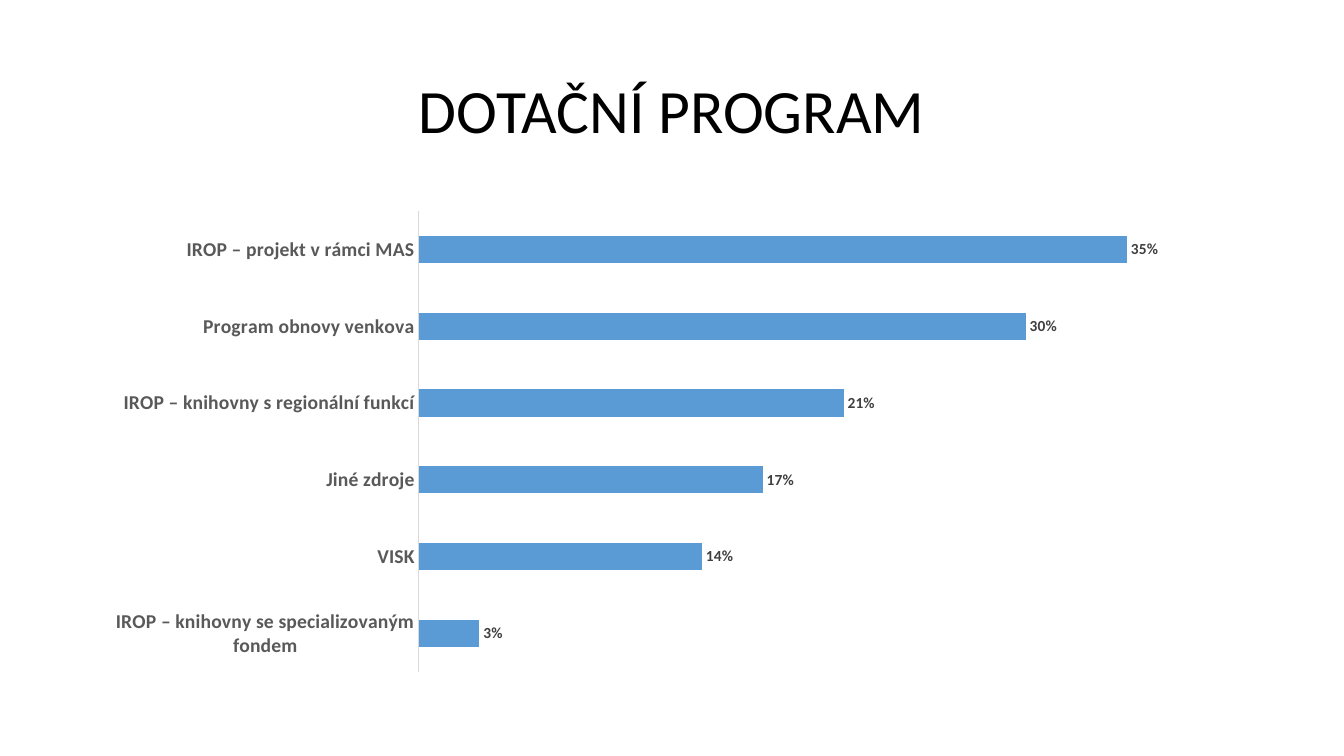
from dataclasses import dataclass

from pptx import Presentation
from pptx import util as u
from pptx.chart.data import CategoryChartData
from pptx.dml.color import RGBColor
from pptx.enum import chart as ch, text

# Content
TITLE = "DOTAČNÍ PROGRAM"
SERIES = "Series 1"
PROGRAMS = [
    ("IROP – projekt v rámci MAS", 0.35),
    ("Program obnovy venkova", 0.30),
    ("IROP – knihovny s regionální funkcí", 0.21),
    ("Jiné zdroje", 0.17),
    ("VISK", 0.14),
    ("IROP – knihovny se specializovaným fondem", 0.03),
]


@dataclass(frozen=True)
class Theme:
    font: str = "Calibri"
    ink: str = "000000"
    category: str = "595959"
    value: str = "404040"
    axis: str = "D9D9D9"
    bar: str = "5B9BD5"
    title_size: int = 44
    category_size: int = 14
    value_size: int = 11
    base_size: int = 10


THEME = Theme()

# Layout: shared side margin, title band above chart band
WIDTH, HEIGHT = u.Inches(13.33), u.Inches(7.5)
MARGIN = u.Inches(0.92)
BAND_WIDTH = WIDTH - 2 * MARGIN
TITLE_TOP, TITLE_HEIGHT = u.Inches(0.4), u.Inches(1.45)
CHART_TOP, CHART_HEIGHT = u.Inches(2), u.Inches(4.76)


def style_font(font, size, color, bold=False):
    font.name = THEME.font
    font.size = u.Pt(size)
    font.bold = bold
    font.color.rgb = RGBColor.from_string(color)


def write(frame, words, size, color, bold=False, align=text.PP_ALIGN.CENTER, spacing=0.9):
    frame.word_wrap = True
    frame.vertical_anchor = text.MSO_ANCHOR.MIDDLE
    line = frame.paragraphs[0]
    line.alignment = align
    line.line_spacing = spacing
    run = line.add_run()
    run.text = words
    style_font(run.font, size, color, bold)


def add_title(slide):
    title = slide.shapes.title
    title.left, title.top = MARGIN, TITLE_TOP
    title.width, title.height = BAND_WIDTH, TITLE_HEIGHT
    write(title.text_frame, TITLE, THEME.title_size, THEME.ink)


def add_program_chart(slide):
    data = CategoryChartData(number_format="0%")
    data.categories = [name for name, share in PROGRAMS]
    data.add_series(SERIES, [share for name, share in PROGRAMS])
    chart = slide.shapes.add_chart(ch.XL_CHART_TYPE.BAR_CLUSTERED, MARGIN, CHART_TOP,
                                   BAND_WIDTH, CHART_HEIGHT, data).chart
    chart.has_title = False
    chart.has_legend = False
    style_font(chart.font, THEME.base_size, THEME.ink)

    # Axes: programs run from top to bottom, the share scale is hidden
    programs = chart.category_axis
    programs.reverse_order = True
    programs.major_tick_mark = programs.minor_tick_mark = ch.XL_TICK_MARK.NONE
    programs.format.line.color.rgb = RGBColor.from_string(THEME.axis)
    programs.format.line.width = u.Pt(0.75)
    style_font(programs.tick_labels.font, THEME.category_size, THEME.category, bold=True)
    shares = chart.value_axis
    shares.minimum_scale, shares.maximum_scale = 0, 0.4
    shares.has_major_gridlines = False
    shares.visible = False

    # Bars and their share labels
    plot = chart.plots[0]
    plot.gap_width = 182
    plot.vary_by_categories = False
    bars = plot.series[0]
    bars.format.fill.solid()
    bars.format.fill.fore_color.rgb = RGBColor.from_string(THEME.bar)
    labels = bars.data_labels
    labels.show_value = True
    labels.number_format = "0%"
    labels.number_format_is_linked = False
    labels.position = ch.XL_LABEL_POSITION.OUTSIDE_END
    style_font(labels.font, THEME.value_size, THEME.value, bold=True)


def main():
    deck = Presentation()
    deck.slide_width, deck.slide_height = WIDTH, HEIGHT
    slide = deck.slides.add_slide(deck.slide_layouts.get_by_name("Title Only"))
    add_title(slide)
    add_program_chart(slide)
    deck.save("out.pptx")


if __name__ == "__main__":
    main()
